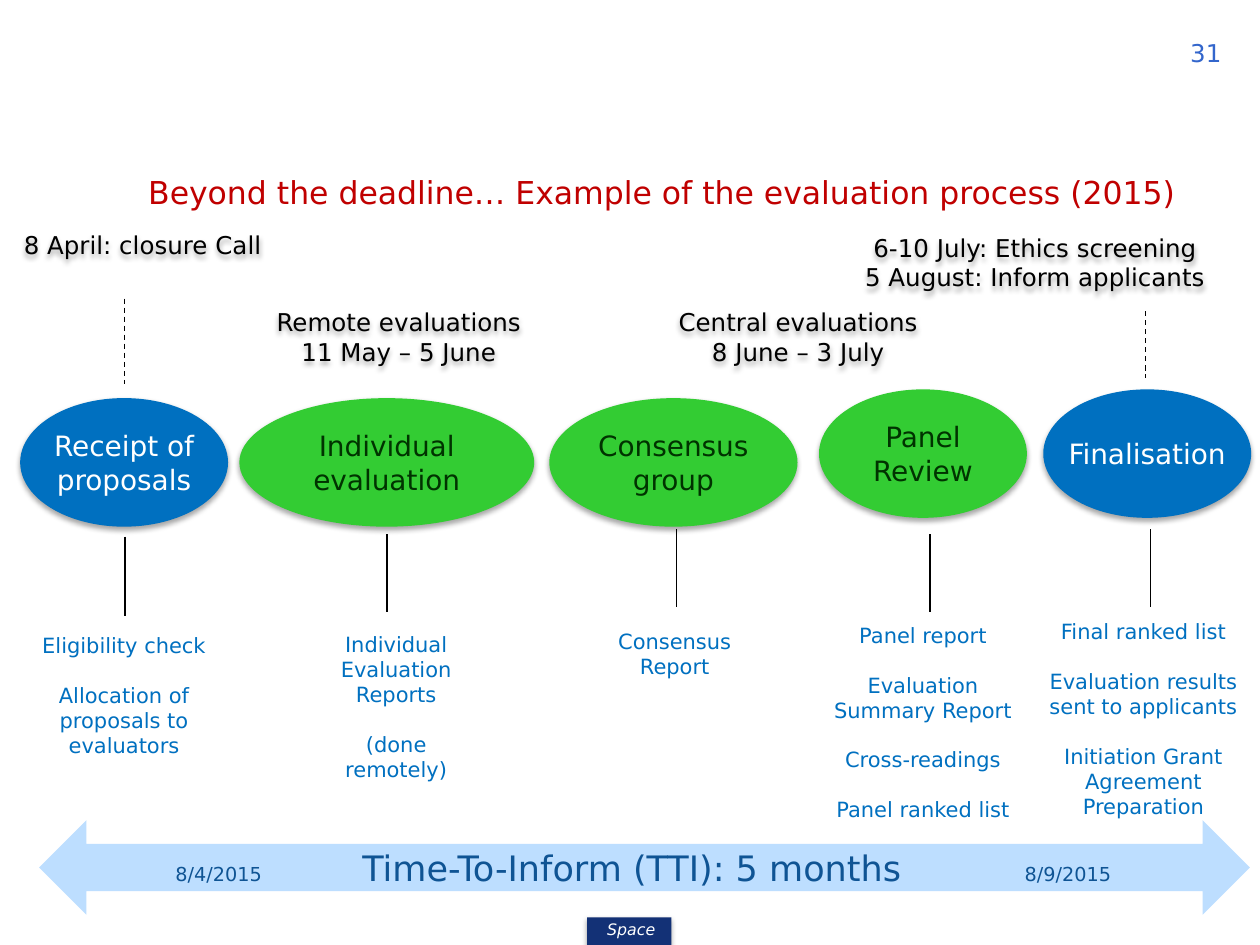
from dataclasses import dataclass
from typing import NamedTuple

import pptx
import pptx.dml.color
import pptx.enum.dml
import pptx.enum.shapes
import pptx.enum.text
import pptx.oxml
import pptx.oxml.ns
import pptx.util

COLS, ROWS = 100, 75
CELL = pptx.util.Inches(0.1)
SHAPE = pptx.enum.shapes.MSO_SHAPE
ALIGN = pptx.enum.text.PP_ALIGN
ANCHOR = pptx.enum.text.MSO_ANCHOR


@dataclass(frozen=True)
class Theme:
    font: str = "DejaVu Sans"
    title: str = "C00000"
    blue: str = "0070C0"
    green: str = "33CC33"
    on_green: str = "003300"
    white: str = "FFFFFF"
    black: str = "000000"
    number: str = "3366CC"
    footer: str = "133176"
    band: str = "BDDEFF"
    on_band: str = "0F5494"
    title_size: int = 18
    stage_size: int = 16
    label_size: int = 14
    output_size: int = 12
    output_gap: int = 14
    band_size: int = 20
    date_size: int = 11
    footer_size: int = 9
    stem_width: float = 1
    dash_width: float = 0.75


T = Theme()


class Box(NamedTuple):
    col: float
    row: float
    cols: float
    rows: float

    def emu(self) -> list[int]:
        return [round(v * CELL) for v in self]


class Stem(NamedTuple):
    col: float
    top: float
    bottom: float
    dashed: bool = False


class Label(NamedTuple):
    lines: list[str]
    box: Box
    align: ALIGN = ALIGN.CENTER
    wrap: bool = True


@dataclass(frozen=True)
class Stage:
    lines: list[str]
    oval: Box
    fill: str
    ink: str
    stem: Stem
    outputs: list[list[str]]
    output_box: Box


STAGES = [
    Stage(["Receipt of", "proposals"], Box(1.6, 31.6, 16.5, 10.2), T.blue, T.white,
          Stem(9.9, 42.6, 48.9),
          [["Eligibility check"], ["Allocation of proposals to evaluators"]],
          Box(1.6, 49.7, 16.5, 11.1)),
    Stage(["Individual", "evaluation"], Box(19, 31.6, 23.4, 10.2), T.green, T.on_green,
          Stem(30.7, 42.4, 48.6),
          [["Individual", "Evaluation", "Reports"], ["(done remotely)"]],
          Box(24.8, 49.6, 13.3, 15.2)),
    Stage(["Consensus", "group"], Box(43.6, 31.6, 19.7, 10.2), T.green, T.on_green,
          Stem(53.7, 42, 48.2), [["Consensus", "Report"]],
          Box(46, 49.4, 15.1, 7.1)),
    Stage(["Panel", "Review"], Box(65, 30.9, 16.5, 10.2), T.green, T.on_green,
          Stem(73.8, 42.4, 48.6),
          [["Panel report"], ["Evaluation Summary Report"], ["Cross-readings"],
           ["Panel ranked list"]],
          Box(64, 48.9, 18.5, 17.2)),
    Stage(["Finalisation"], Box(82.8, 30.9, 16.5, 10.2), T.blue, T.white,
          Stem(91.3, 42, 48.2),
          [["Final ranked list"], ["Evaluation results sent to applicants"],
           ["Initiation Grant Agreement Preparation"]],
          Box(81.5, 48.6, 18.5, 17.2)),
]

LABELS = [
    Label(["8 April: closure Call"], Box(0.9, 17.8, 22.2, 3.4), ALIGN.LEFT, False),
    Label(["6-10 July: Ethics screening", "5 August: Inform applicants"],
          Box(64.5, 18, 35.3, 5.7)),
    Label(["Remote evaluations", "11 May – 5 June"], Box(19.7, 23.9, 23.9, 5.7)),
    Label(["Central evaluations", "8 June – 3 July"], Box(47.7, 23.9, 31.3, 5.7)),
]

DATE_STEMS = [Stem(9.9, 23.7, 30.5, True), Stem(90.9, 24.7, 30, True)]
BAND_TEXT = [("8/4/2015", T.date_size, 11.4),
             ("Time-To-Inform (TTI): 5 months", T.band_size, 44.2),
             ("8/9/2015", T.date_size, 78.8)]


def rgb(color: str) -> pptx.dml.color.RGBColor:
    return pptx.dml.color.RGBColor.from_string(color)


def style(font, size: float, color: str, italic: bool = False) -> None:
    font.name, font.size, font.italic = T.font, pptx.util.Pt(size), italic
    font.color.rgb = rgb(color)


def write(tf, text: list[list[str]], *, size: float, color: str,
          align: ALIGN = ALIGN.CENTER, gap: float = 0, wrap: bool = True,
          anchor: ANCHOR = ANCHOR.TOP, italic: bool = False) -> None:
    tf.word_wrap, tf.vertical_anchor = wrap, anchor
    for g, group in enumerate(text):
        for i, line in enumerate(group):
            p = tf.paragraphs[0] if g == i == 0 else tf.add_paragraph()
            p.alignment = align
            if g and i == 0:
                p.space_before = pptx.util.Pt(gap)
            r = p.add_run()
            r.text = line
            style(r.font, size, color, italic)


def add_shadow(sp) -> None:
    sp.shadow.inherit = False
    effects = sp._element.spPr.find(pptx.oxml.ns.qn("a:effectLst"))
    effects.append(pptx.oxml.parse_xml(
        f'<a:outerShdw {pptx.oxml.ns.nsdecls("a")} blurRad="39370" dist="22860" '
        'dir="5400000" rotWithShape="0"><a:srgbClr val="000000">'
        '<a:alpha val="35000"/></a:srgbClr></a:outerShdw>'))


def add_shape(s, kind: SHAPE, box: Box, fill: str):
    sp = s.shapes.add_shape(kind, *box.emu())
    sp.shadow.inherit = False
    sp.fill.solid()
    sp.fill.fore_color.rgb = rgb(fill)
    sp.line.fill.background()
    return sp


def add_text(s, box: Box, text: list[list[str]], **fmt):
    sp = s.shapes.add_textbox(*box.emu())
    write(sp.text_frame, text, **fmt)
    return sp


def add_stem(s, stem: Stem) -> None:
    x, top, bottom = (round(v * CELL) for v in stem[:3])
    sp = s.shapes.add_connector(pptx.enum.shapes.MSO_CONNECTOR.STRAIGHT, x, top, x, bottom)
    sp.line.color.rgb = rgb(T.black)
    sp.line.width = pptx.util.Pt(T.dash_width if stem.dashed else T.stem_width)
    if stem.dashed:
        sp.line.dash_style = pptx.enum.dml.MSO_LINE.DASH
    sp._element.spPr.append(pptx.oxml.parse_xml(
        f'<a:effectLst {pptx.oxml.ns.nsdecls("a")}/>'))


def add_stage(s, stage: Stage) -> None:
    sp = add_shape(s, SHAPE.OVAL, stage.oval, stage.fill)
    add_shadow(sp)
    tf = sp.text_frame
    tf.margin_left = tf.margin_right = tf.margin_top = tf.margin_bottom = 0
    write(tf, [stage.lines], size=T.stage_size, color=stage.ink, wrap=False,
          anchor=ANCHOR.MIDDLE)
    add_stem(s, stage.stem)
    add_text(s, stage.output_box, stage.outputs, size=T.output_size, color=T.blue,
             gap=T.output_gap)


def add_band(s) -> None:
    sp = add_shape(s, SHAPE.LEFT_RIGHT_ARROW, Box(3.1, 65.1, 96.1, 7.5), T.band)
    sp.text_frame.vertical_anchor = ANCHOR.MIDDLE
    p = sp.text_frame.paragraphs[0]
    p.alignment = ALIGN.LEFT
    stops = "".join(f'<a:tab pos="{round(col * CELL)}" algn="ctr"/>'
                    for _, _, col in BAND_TEXT)
    p._p.get_or_add_pPr().append(pptx.oxml.parse_xml(
        f'<a:tabLst {pptx.oxml.ns.nsdecls("a")}>{stops}</a:tabLst>'))
    for text, size, _ in BAND_TEXT:
        r = p.add_run()
        r.text = "\t" + text
        style(r.font, size, T.on_band)


def main() -> None:
    prs = pptx.Presentation()
    prs.slide_width, prs.slide_height = COLS * CELL, ROWS * CELL
    s = prs.slides.add_slide(prs.slide_layouts.get_by_name("Title Only"))
    title = s.shapes.title
    title.left, title.top, title.width, title.height = Box(4.1, 13.2, 96.9, 4.6).emu()
    write(title.text_frame, [["Beyond the deadline… Example of the evaluation process (2015)"]],
          size=T.title_size, color=T.title)
    title.text_frame.auto_size = pptx.enum.text.MSO_AUTO_SIZE.NONE
    add_text(s, Box(91.4, 2.5, 8.6, 3.4), [["31"]], size=T.label_size, color=T.number)
    add_shadow(add_shape(s, SHAPE.RECTANGLE, Box(46.6, 72.8, 6.7, 2.2), T.footer))
    add_text(s, Box(46.9, 72.5, 6.4, 2.6), [["Space"]], size=T.footer_size,
             color=T.white, italic=True)
    add_band(s)
    for stage in STAGES:
        add_stage(s, stage)
    for stem in DATE_STEMS:
        add_stem(s, stem)
    for label in LABELS:
        add_shadow(add_text(s, label.box, [label.lines], size=T.label_size,
                            color=T.black, align=label.align, wrap=label.wrap))
    prs.save("out.pptx")


if __name__ == "__main__":
    main()
